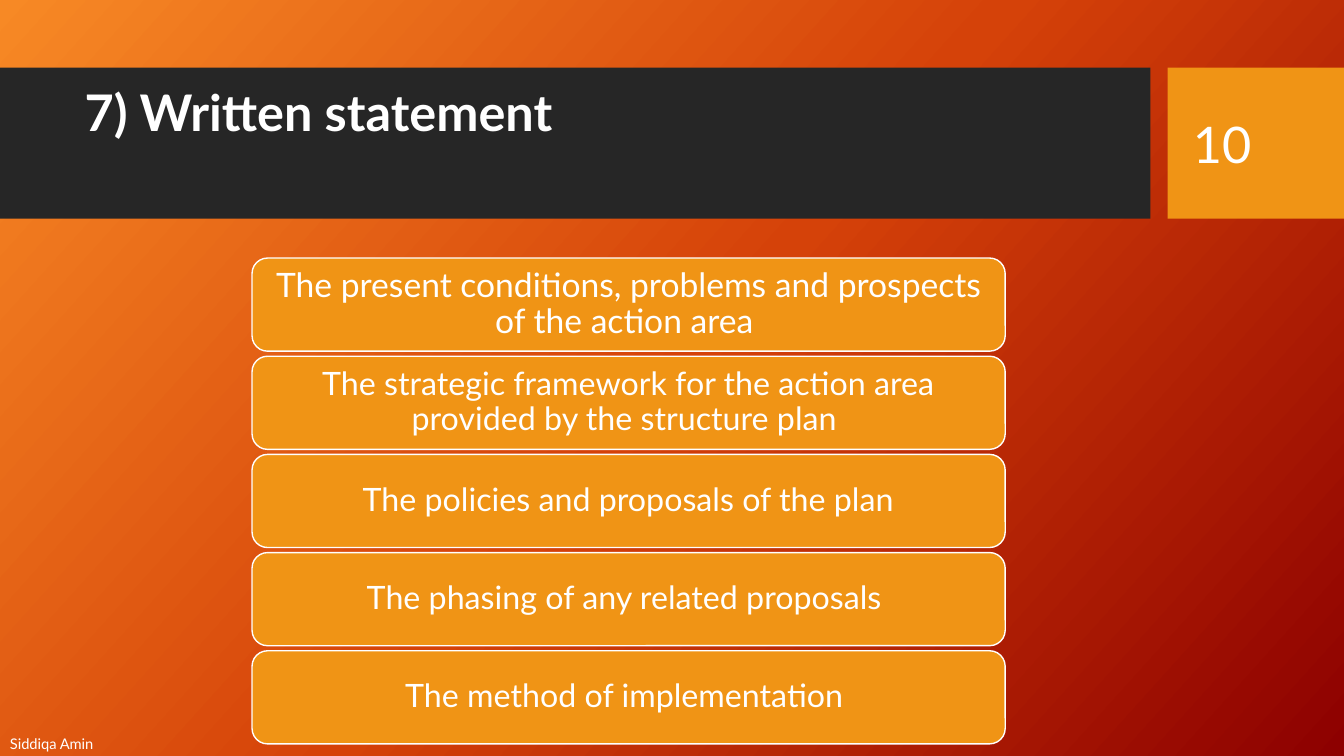
from copy import deepcopy
from pptx import Presentation
from pptx.dml.color import RGBColor
from pptx.enum import shapes, text
from pptx import util as u

W, H = 13.33, 7.5
FONT = "Lato"
COLORS = {"light": "F78925", "mid": "D54209", "deep": "8D0000",
          "band": "262626", "accent": "F09415", "text": "FFFFFF"}
STATEMENTS = [
    ("The present conditions, problems and prospects of the action area ", 24),
    ("The strategic framework for the action area provided by the structure plan ", 23),
    ("The policies and proposals of the plan", 23),
    ("The phasing of any related proposals ", 23),
    ("The method of implementation ", 23),
]


def rgb(name):
    return RGBColor.from_string(COLORS[name])


def inches(*lengths):
    return [u.Inches(n) for n in lengths]


def paint_background(slide):
    fill = slide.background.fill
    fill.gradient()
    fill.gradient_angle = 360 - 42
    # The default gradient has two stops; add a third
    stop = fill.gradient_stops[0]._gs
    stop.addnext(deepcopy(stop))
    for stop, name, pos in zip(fill.gradient_stops, ("light", "mid", "deep"), (0, 0.5, 1)):
        stop.color.rgb = rgb(name)
        stop.position = pos


def add_block(slide, kind, box, color, outlined=False):
    sp = slide.shapes.add_shape(kind, *inches(*box))
    sp.shadow.inherit = False
    sp.fill.solid()
    sp.fill.fore_color.rgb = rgb(color)
    if outlined:
        sp.line.color.rgb = rgb("text")
        sp.line.width = u.Pt(1)
    else:
        sp.line.fill.background()
    return sp


def set_text(sp, words, size, align=text.PP_ALIGN.LEFT, anchor=text.MSO_ANCHOR.MIDDLE,
             bold=False, spacing=1.0, margins=(0.1, 0.05)):
    tf = sp.text_frame
    tf.word_wrap = True
    tf.auto_size = text.MSO_AUTO_SIZE.NONE
    tf.vertical_anchor = anchor
    tf.margin_left = tf.margin_right = u.Inches(margins[0])
    tf.margin_top = tf.margin_bottom = u.Inches(margins[1])
    tf.text = words
    p = tf.paragraphs[0]
    p.alignment = align
    p.line_spacing = spacing
    font = p.runs[0].font
    font.name, font.size, font.bold = FONT, u.Pt(size), bold
    font.color.rgb = rgb("text")


def add_header(slide, box):
    x, y, w, h = box
    number_w, gap = 1.75, 0.17
    rect = shapes.MSO_SHAPE.RECTANGLE
    # Dark title band and number tile
    band = add_block(slide, rect, (x, y, w - number_w - gap, h), "band")
    tile = add_block(slide, rect, (x + w - number_w, y, number_w, h), "accent")
    set_text(tile, "10", 36, margins=(0.25, 0.05))
    # Title, placed above the band
    title = slide.shapes.title
    title.left, title.top, title.width, title.height = inches(x + 0.74, y + 0.15, 10.51, 1.18)
    band._element.addprevious(title._element)
    tile._element.addnext(title._element)
    set_text(title, "7) Written statement", 36, anchor=text.MSO_ANCHOR.TOP,
             bold=True, spacing=0.9)


def add_statements(slide, box):
    x, y, w, h = box
    pitch = h / len(STATEMENTS)
    for i, (words, size) in enumerate(STATEMENTS):
        bar = add_block(slide, shapes.MSO_SHAPE.ROUNDED_RECTANGLE,
                        (x, y + i * pitch, w, pitch - 0.05), "accent", outlined=True)
        set_text(bar, words, size, text.PP_ALIGN.CENTER, spacing=0.9, margins=(0.1, 0.05))


def add_author(slide, box):
    sp = slide.shapes.add_textbox(*inches(*box))
    set_text(sp, "Siddiqa Amin", 10.5, margins=(0.1, 0))


def main():
    prs = Presentation()
    prs.slide_width, prs.slide_height = inches(W, H)
    slide = prs.slides.add_slide(prs.slide_layouts[5])
    paint_background(slide)
    add_header(slide, (0, 0.67, W, 1.5))
    add_statements(slide, (2.5, 2.56, 7.47, 4.87))
    add_author(slide, (0, 7.26, 7.51, 0.24))
    prs.save("out.pptx")


if __name__ == "__main__":
    main()
